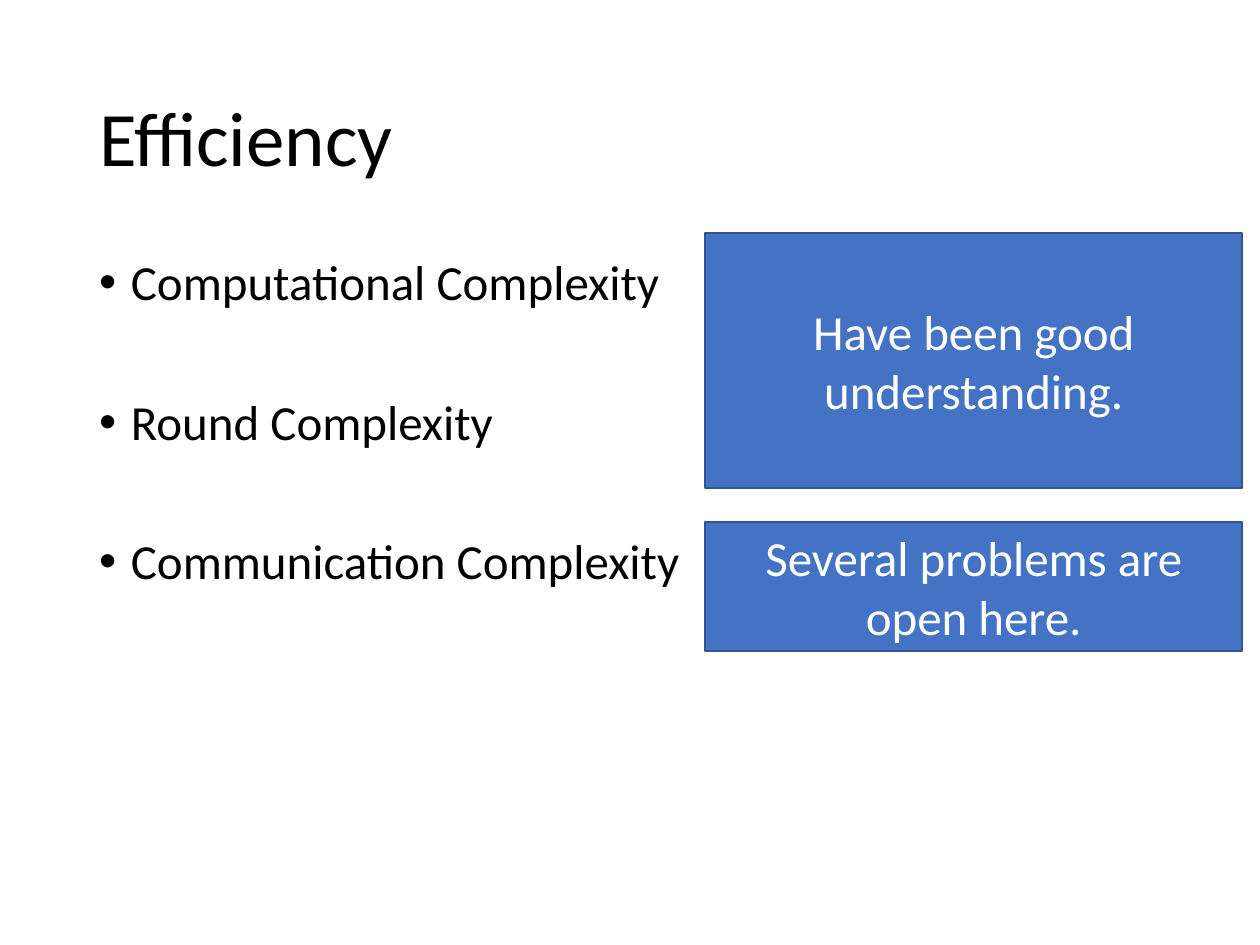
import pptx
import pptx.dml.color
import pptx.enum.shapes
import pptx.enum.text
import pptx.oxml
import pptx.oxml.ns
import pptx.util
from pptx.util import Cm

BLACK = pptx.dml.color.RGBColor(0x00, 0x00, 0x00)
WHITE = pptx.dml.color.RGBColor(0xFF, 0xFF, 0xFF)
BLUE = pptx.dml.color.RGBColor(0x44, 0x72, 0xC4)
DARK_BLUE = pptx.dml.color.RGBColor(0x32, 0x54, 0x91)
FONT = "Calibri"
INDENT = Cm(0.64)


def add_bullet(paragraph):
    properties = paragraph._p.get_or_add_pPr()
    properties.set("marL", str(INDENT))
    properties.set("indent", str(-INDENT))
    namespace = pptx.oxml.ns.nsdecls("a")
    for element in ('<a:buFont %s typeface="Arial"/>', '<a:buChar %s char="•"/>'):
        properties.append(pptx.oxml.parse_xml(element % namespace))


def write_text(frame, lines, size=28, color=BLACK, align=pptx.enum.text.PP_ALIGN.LEFT,
               anchor=pptx.enum.text.MSO_ANCHOR.MIDDLE, line_spacing=1.0,
               gap=0, bullets=False):
    frame.word_wrap = True
    frame.vertical_anchor = anchor
    for index, line in enumerate(lines):
        paragraph = frame.add_paragraph() if index else frame.paragraphs[0]
        paragraph.alignment = align
        paragraph.line_spacing = line_spacing
        if index:
            paragraph.space_before = pptx.util.Pt(gap)
        if bullets:
            add_bullet(paragraph)
        run = paragraph.add_run()
        run.text = line
        run.font.name = FONT
        run.font.size = pptx.util.Pt(size)
        run.font.color.rgb = color


def add_title(slide, left, top, width, height):
    box = slide.shapes.add_textbox(left, top, width, height)
    write_text(box.text_frame, ["Efficiency"], size=44, line_spacing=0.9)


def add_complexity_list(slide, left, top, width, height):
    box = slide.shapes.add_textbox(left, top, width, height)
    kinds = ["Computational", "Round", "Communication"]
    write_text(box.text_frame, [f"{kind} Complexity" for kind in kinds],
               anchor=pptx.enum.text.MSO_ANCHOR.TOP, line_spacing=0.9,
               gap=49.5, bullets=True)


def add_remarks(slide, left, top, width, height):
    # Each remark: text, offset from the top, share of the region's height
    remarks = [("Several problems are open here.", 0.69, 0.31),
               ("Have been good understanding.", 0, 0.61)]
    for text, offset, share in remarks:
        shape = slide.shapes.add_shape(
            pptx.enum.shapes.MSO_SHAPE.RECTANGLE,
            left, top + int(height * offset), width, int(height * share))
        shape.shadow.inherit = False
        shape.fill.solid()
        shape.fill.fore_color.rgb = BLUE
        shape.line.color.rgb = DARK_BLUE
        shape.line.width = pptx.util.Pt(1)
        write_text(shape.text_frame, [text], color=WHITE,
                   align=pptx.enum.text.PP_ALIGN.CENTER)


def main():
    presentation = pptx.Presentation()
    presentation.slide_width = Cm(25.4)
    presentation.slide_height = Cm(19.05)
    slide = presentation.slides.add_slide(presentation.slide_layouts[6])

    # Title and list share the left margin; remarks stand at the right
    margin, content_width = Cm(1.75), Cm(21.9)
    add_title(slide, margin, Cm(1.02), content_width, Cm(3.68))
    add_complexity_list(slide, margin, Cm(5.08), content_width, Cm(12.09))
    add_remarks(slide, Cm(14.22), Cm(4.7), Cm(10.82), Cm(8.43))

    presentation.save("out.pptx")


if __name__ == "__main__":
    main()
